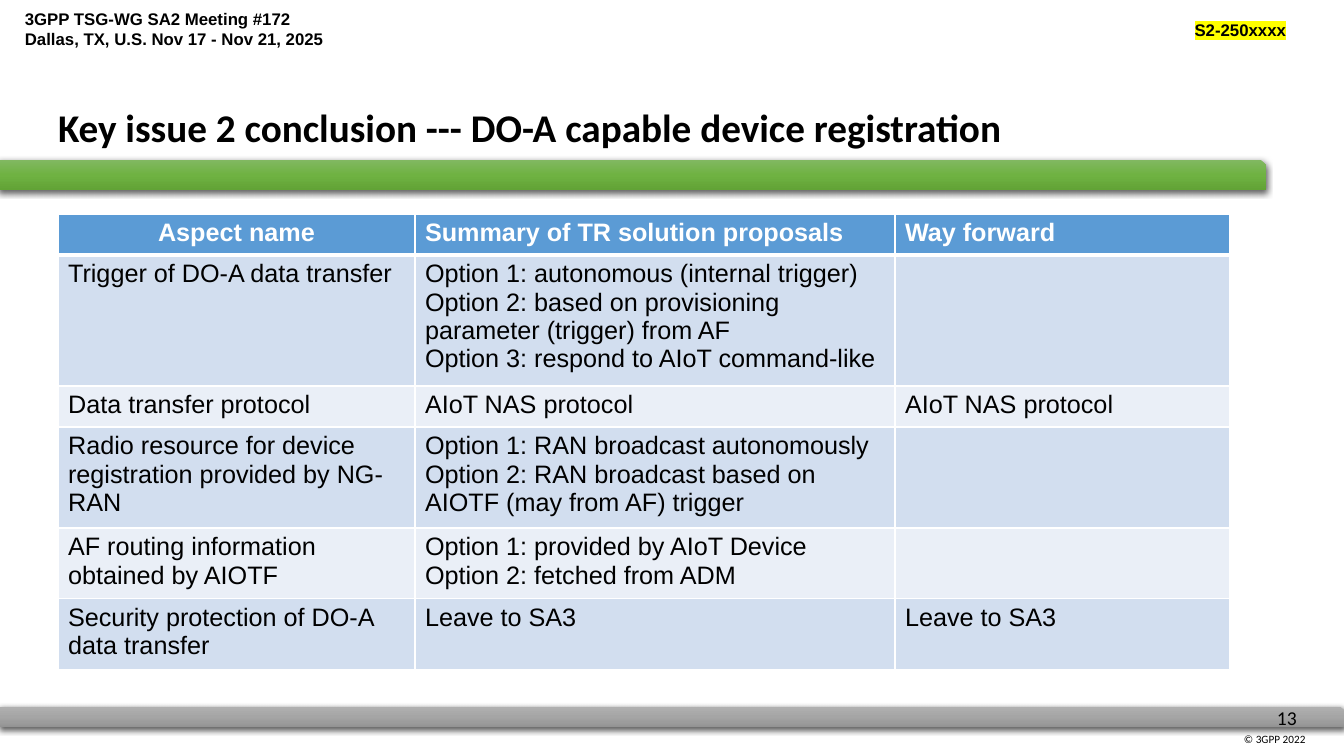
from pptx import Presentation
from pptx.dml.color import RGBColor
from pptx.enum.shapes import MSO_SHAPE
from pptx.enum.text import MSO_ANCHOR, MSO_AUTO_SIZE, PP_ALIGN as ALIGN
from pptx.oxml import parse_xml
from pptx.oxml.ns import nsdecls
from pptx.util import Pt

PX = 12192000 / 1344
COLORS = {
    "black": "000000", "white": "FFFFFF", "highlight": "FFFF00",
    "header": "5B9BD5", "odd": "D2DEEF", "even": "EAEFF7",
}
GRAY_STOPS = ["AFAFAF", "A5A5A5", "939393"]
GREEN_STOPS = ["81B861", "6FB242", "62A336"]


def px(*lengths):
    return [round(length * PX) for length in lengths]


def write(frame, text, size=18, font="Arial", color="black", bold=False,
          align=ALIGN.LEFT, spacing=None, highlight=None):
    """Fill a text frame, one paragraph for each line of text."""
    frame.text = text
    for paragraph in frame.paragraphs:
        paragraph.alignment = align
        if spacing:
            paragraph.line_spacing = spacing
        for run in paragraph.runs:
            run.font.size = Pt(size)
            run.font.name = font
            run.font.bold = bold
            run.font.color.rgb = RGBColor.from_string(COLORS[color])
            if highlight:
                run.font._element.solidFill.addnext(parse_xml(
                    f'<a:highlight {nsdecls("a")}>'
                    f'<a:srgbClr val="{COLORS[highlight]}"/></a:highlight>'))


presentation = Presentation()
presentation.slide_width, presentation.slide_height = px(1344, 756)
slide = presentation.slides.add_slide(presentation.slide_layouts[5])

# Footer and title bars
for box, stops in [((0, 707, 1344, 20), GRAY_STOPS),
                   ((-1, 160, 1267, 30), GREEN_STOPS)]:
    bar = slide.shapes.add_shape(MSO_SHAPE.SNIP_1_RECTANGLE, *px(*box))
    stop_xml = "".join(
        f'<a:gs pos="{index * 50000}"><a:srgbClr val="{color}"/></a:gs>'
        for index, color in enumerate(stops))
    properties = bar._element.spPr
    properties.append(parse_xml(
        f'<a:gradFill {nsdecls("a")} rotWithShape="1"><a:gsLst>{stop_xml}</a:gsLst>'
        '<a:lin ang="5400000" scaled="0"/></a:gradFill>'))
    bar.line.fill.background()
    properties.append(parse_xml(
        f'<a:effectLst {nsdecls("a")}>'
        f'<a:outerShdw blurRad="{Pt(4.5)}" dist="{Pt(1.5)}" dir="5400000" '
        f'algn="ctr" rotWithShape="0"><a:srgbClr val="{COLORS["black"]}">'
        '<a:alpha val="63000"/></a:srgbClr></a:outerShdw></a:effectLst>'))

# Header and footer texts
for box, text, wrap, style in [
    ((1234, 727, 109, 23), "© 3GPP 2022", True, dict(size=8, font="Calibri")),
    ((1267, 701, 43, 34), "13", False, dict(size=14, font="Calibri")),
    ((15, 4, 424, 50),
     "3GPP TSG-WG SA2 Meeting #172\nDallas, TX, U.S. Nov 17 - Nov 21, 2025",
     True, dict(size=12, bold=True)),
    ((1010, 15, 286, 30), "S2-250xxxx", True,
     dict(size=12, bold=True, align=ALIGN.RIGHT, highlight="highlight")),
]:
    frame = slide.shapes.add_textbox(*px(*box)).text_frame
    frame.word_wrap = wrap
    write(frame, text, **style)

title = slide.shapes.title
title.left, title.top, title.width, title.height = px(58, 102, 989, 52)
frame = title.text_frame
frame.auto_size = MSO_AUTO_SIZE.NONE
frame.vertical_anchor = MSO_ANCHOR.TOP
frame.margin_left = frame.margin_top = frame.margin_right = frame.margin_bottom = 0
write(frame, "Key issue 2 conclusion --- DO-A capable device registration",
      size=28, font="Calibri", bold=True, align=ALIGN.JUSTIFY, spacing=Pt(34.3))

# Aspect table
ROWS = [
    ("Aspect name", "Summary of TR solution proposals", "Way forward"),
    ("Trigger of DO-A data transfer",
     "Option 1: autonomous (internal trigger)\n"
     "Option 2: based on provisioning parameter (trigger) from AF\n"
     "Option 3: respond to AIoT command-like", ""),
    ("Data transfer protocol", "AIoT NAS protocol", "AIoT NAS protocol"),
    ("Radio resource for device registration provided by NG-RAN",
     "Option 1: RAN broadcast autonomously\n"
     "Option 2: RAN broadcast based on AIOTF (may from AF) trigger", ""),
    ("AF routing information obtained by AIOTF",
     "Option 1: provided by AIoT Device\nOption 2: fetched from ADM", ""),
    ("Security protection of DO-A data transfer", "Leave to SA3", "Leave to SA3"),
]
COLUMN_WIDTHS = px(357, 480, 335)
ROW_HEIGHTS = px(41, 131, 41, 101, 70, 71)

table = slide.shapes.add_table(len(ROWS), len(COLUMN_WIDTHS), *px(58, 214),
                               sum(COLUMN_WIDTHS), sum(ROW_HEIGHTS)).table
for column, width in zip(table.columns, COLUMN_WIDTHS):
    column.width = width
for row_index, (row, height, texts) in enumerate(zip(table.rows, ROW_HEIGHTS, ROWS)):
    row.height = height
    is_header = row_index == 0
    fill = "header" if is_header else "odd" if row_index % 2 else "even"
    for column_index, (cell, text) in enumerate(zip(row.cells, texts)):
        centered = is_header and column_index == 0
        write(cell.text_frame, text, bold=is_header,
              color="white" if is_header else "black",
              align=ALIGN.CENTER if centered else ALIGN.LEFT)
        cell_properties = cell._tc.get_or_add_tcPr()
        for side in "LRTB":
            thick = (row_index, side) in [(0, "B"), (1, "T")]
            cell_properties.append(parse_xml(
                f'<a:ln{side} {nsdecls("a")} w="{Pt(3 if thick else 1)}"><a:solidFill>'
                f'<a:srgbClr val="{COLORS["white"]}"/></a:solidFill></a:ln{side}>'))
        cell.fill.solid()
        cell.fill.fore_color.rgb = RGBColor.from_string(COLORS[fill])

presentation.save("out.pptx")
